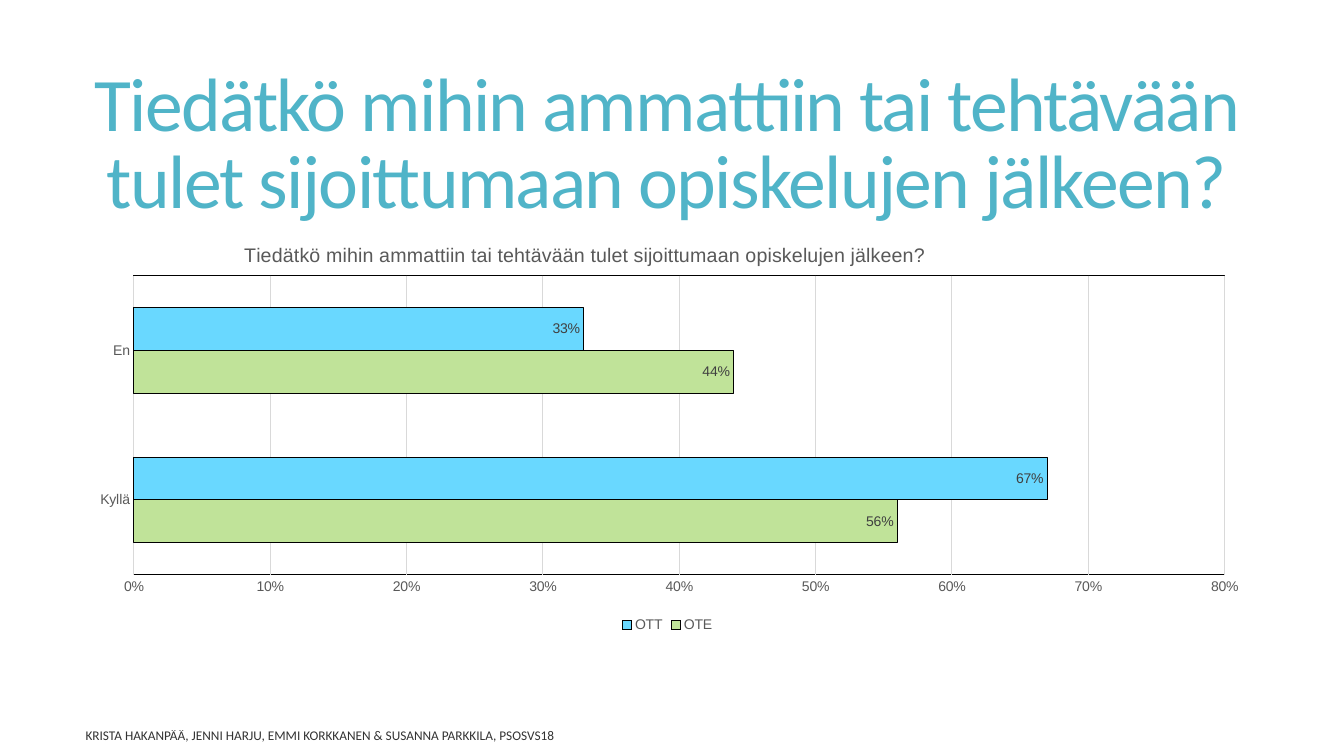
"""Build a survey slide with a title, a clustered bar chart and an author line."""
from lxml import etree
from pptx import Presentation
from pptx.chart.data import CategoryChartData
from pptx.dml.color import RGBColor
from pptx.enum.chart import XL_CHART_TYPE, XL_LABEL_POSITION, XL_LEGEND_POSITION, XL_TICK_MARK
from pptx.enum.text import MSO_ANCHOR, PP_ALIGN
from pptx.oxml import parse_xml
from pptx.oxml.ns import nsdecls, qn
from pptx.util import Inches, Pt

BAR = XL_CHART_TYPE.BAR_CLUSTERED
BOTTOM = XL_LEGEND_POSITION.BOTTOM
INSIDE_END = XL_LABEL_POSITION.INSIDE_END
NO_TICK = XL_TICK_MARK.NONE
MIDDLE = MSO_ANCHOR.MIDDLE
LEFT, CENTER = PP_ALIGN.LEFT, PP_ALIGN.CENTER

QUESTION = "Tiedätkö mihin ammattiin tai tehtävään tulet sijoittumaan opiskelujen jälkeen?"
AUTHORS = "KRISTA HAKANPÄÄ, JENNI HARJU, EMMI KORKKANEN & SUSANNA PARKKILA, PSOSVS18"
ANSWERS = ["Kyllä", "En"]
GROUPS = [("OTE", (0.56, 0.44), "C0E399"), ("OTT", (0.67, 0.33), "69D8FF")]

TITLE_BOX = (0.72, 0.55, 11.78, 1.81)
AUTHOR_BOX = (0.75, 7.17, 5.5, 0.25)
CHART_BOX = (0.74, 2.2, 11.76, 4.12)
PLOT_LAYOUT = {"x": 0.05, "y": 0.13, "w": 0.92, "h": 0.72}
CHART_TITLE_LAYOUT = {"x": 0.14, "y": 0.04}

THEME = {
    "text_font": "Calibri", "chart_font": "Arial",
    "title": "50B4C8", "ink": "000000", "label": "404040", "axis": "595959", "grid": "D9D9D9",
    "title_size": 54, "author_size": 9.5, "chart_title_size": 14, "chart_size": 10, "line": 0.75,
}


def rgb(value):
    return RGBColor.from_string(value)


def style_font(font, name, size, color):
    font.name, font.size, font.bold = name, Pt(size), False
    font.color.rgb = rgb(color)


def style_line(line, color):
    line.width = Pt(THEME["line"])
    line.color.rgb = rgb(color)


def add_text(s, box, text, size, color, align):
    tf = s.shapes.add_textbox(*map(Inches, box)).text_frame
    tf.word_wrap, tf.vertical_anchor = True, MIDDLE
    p = tf.paragraphs[0]
    p.alignment = align
    r = p.add_run()
    r.text = text
    style_font(r.font, THEME["text_font"], size, color)
    return p, r


def set_layout(parent, index, fractions):
    for old in parent.findall(qn("c:layout")):
        parent.remove(old)
    layout = etree.Element(qn("c:layout"))
    manual = etree.SubElement(layout, qn("c:manualLayout"))
    if "w" in fractions:
        etree.SubElement(manual, qn("c:layoutTarget"), val="inner")
    for key in ("x", "y"):
        etree.SubElement(manual, qn(f"c:{key}Mode"), val="edge")
    for key, value in fractions.items():
        etree.SubElement(manual, qn(f"c:{key}"), val=str(value))
    parent.insert(index, layout)


def add_survey_chart(s):
    data = CategoryChartData(number_format="0%")
    data.categories = ANSWERS
    for name, values, _ in GROUPS:
        data.add_series(name, values)
    chart = s.shapes.add_chart(BAR, *map(Inches, CHART_BOX), data).chart
    family, size = THEME["chart_font"], THEME["chart_size"]
    style_font(chart.font, family, size, THEME["axis"])

    chart.has_title = True
    r = chart.chart_title.text_frame.paragraphs[0].add_run()
    r.text = QUESTION
    style_font(r.font, family, THEME["chart_title_size"], THEME["axis"])
    set_layout(chart.chart_title._element, 1, CHART_TITLE_LAYOUT)

    chart.has_legend = True
    chart.legend.position, chart.legend.include_in_layout = BOTTOM, False
    style_font(chart.legend.font, family, size, THEME["axis"])

    answers, shares = chart.category_axis, chart.value_axis
    for axis in (answers, shares):
        axis.major_tick_mark = axis.minor_tick_mark = NO_TICK
        style_font(axis.tick_labels.font, family, size, THEME["axis"])
    style_line(answers.format.line, THEME["grid"])
    shares.format.line.fill.background()
    shares.minimum_scale, shares.maximum_scale, shares.major_unit = 0, 0.8, 0.1
    shares.tick_labels.number_format = "0%"
    shares.tick_labels.number_format_is_linked = False
    style_line(shares.major_gridlines.format.line, THEME["grid"])

    plot = chart.plots[0]
    plot.gap_width, plot.overlap, plot.vary_by_categories = 150, 0, False
    for series, (_, _, color) in zip(plot.series, GROUPS):
        series.format.fill.solid()
        series.format.fill.fore_color.rgb = rgb(color)
        style_line(series.format.line, THEME["ink"])
        labels = series.data_labels
        labels.show_value, labels.position = True, INSIDE_END
        labels.number_format, labels.number_format_is_linked = "0%", False
        style_font(labels.font, family, size, THEME["label"])

    area = chart._chartSpace.chart.plotArea
    set_layout(area, 0, PLOT_LAYOUT)
    area.append(parse_xml(
        f'<c:spPr {nsdecls("c", "a")}><a:noFill/><a:ln w="{Pt(THEME["line"])}"><a:solidFill>'
        f'<a:srgbClr val="{THEME["ink"]}"/></a:solidFill></a:ln></c:spPr>'))


def main():
    prs = Presentation()
    prs.slide_width, prs.slide_height = Inches(13.33), Inches(7.5)
    s = prs.slides.add_slide(prs.slide_layouts[6])
    p, r = add_text(s, TITLE_BOX, QUESTION, THEME["title_size"], THEME["title"], CENTER)
    p.line_spacing = 0.85
    r.font._element.set("spc", "-120")
    _, r = add_text(s, AUTHOR_BOX, AUTHORS, THEME["author_size"], THEME["ink"], LEFT)
    ink = r.font._element.find(".//" + qn("a:srgbClr"))
    etree.SubElement(ink, qn("a:alpha"), val="80000")
    add_survey_chart(s)
    prs.save("out.pptx")


if __name__ == "__main__":
    main()
